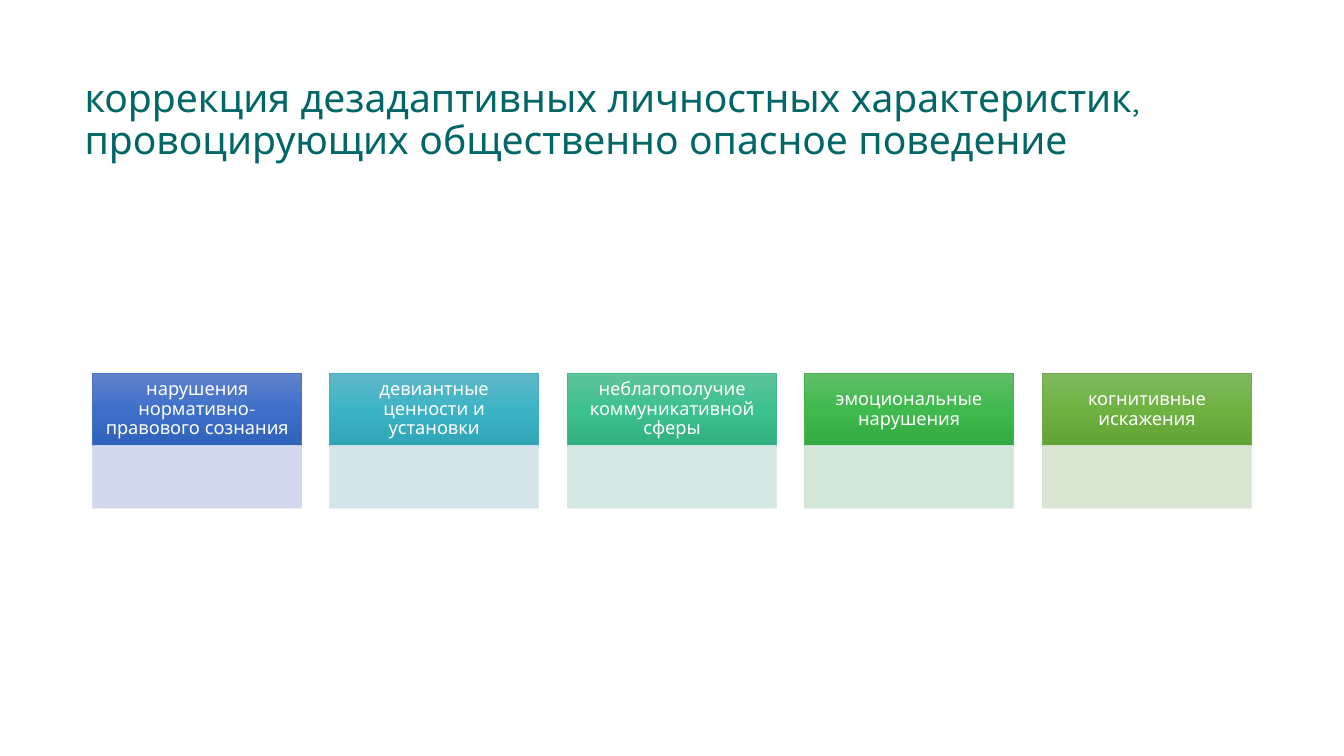
from lxml import etree
from pptx import Presentation
from pptx.dml.color import RGBColor as Color
from pptx.enum.shapes import MSO_SHAPE as Shape
from pptx.enum.text import MSO_ANCHOR as Anchor, PP_ALIGN as Align
from pptx.oxml import parse_xml
from pptx.oxml.ns import nsdecls, qn
from pptx.util import Pt

PX = 9144
FONT = "Quicksand"
LEFT, SPAN, WIDTH = 92, 942, 207
TOP, HEAD, BODY = 370, 72, 62

CARDS = [
    ("нарушения нормативно-правового сознания",
     ("6183CB", "3E70CA", "3062BB"), "4472C4", "CFD5EA"),
    ("девиантные ценности и установки",
     ("61B8C7", "3DB4C6", "30A5B7"), "43AFC0", "CFE2E8"),
    ("неблагополучие коммуникативной сферы",
     ("60C39A", "3DC18F", "31B080"), "43BB8D", "CFE6E0"),
    ("эмоциональные нарушения",
     ("60BE68", "40B94D", "34AA41"), "45B451", "CFE5D4"),
    ("когнитивные искажения",
     ("81B861", "6FB242", "62A336"), "70AD47", "D5E3CF"),
]


def paint(target, tone):
    target.rgb = Color.from_string(tone)


def write(frame, text, size, tone, align, anchor, pads):
    frame.word_wrap = True
    frame.vertical_anchor = anchor
    side, rise = pads
    frame.margin_left = frame.margin_right = side * PX
    frame.margin_top = frame.margin_bottom = rise * PX
    para = frame.paragraphs[0]
    para.alignment = align
    para.line_spacing = 0.9
    run = para.add_run()
    run.text = text
    run.font.name = FONT
    run.font.size = Pt(size)
    paint(run.font.color, tone)


def add_title(slide, text):
    box = slide.shapes.add_textbox(74 * PX, 78 * PX, 1150 * PX, 141 * PX)
    write(box.text_frame, text, 27.9, "006666", Align.LEFT, Anchor.TOP, (10, 0))


def add_rect(slide, left, top, high, tone, edge):
    rect = slide.shapes.add_shape(
        Shape.RECTANGLE, left * PX, top * PX, WIDTH * PX, high * PX)
    rect.shadow.inherit = False
    rect.fill.solid()
    paint(rect.fill.fore_color, tone)
    paint(rect.line.color, edge)
    rect.line.width = Pt(0.5)
    return rect


def blend(rect, tones):
    stops = "".join(
        f'<a:gs pos="{i * 50000}"><a:srgbClr val="{tone}"/></a:gs>'
        for i, tone in enumerate(tones))
    grad = parse_xml(
        f'<a:gradFill {nsdecls("a")} rotWithShape="1"><a:gsLst>{stops}</a:gsLst>'
        '<a:lin ang="5400000" scaled="0"/></a:gradFill>')
    props = rect.element.spPr
    props.replace(props.find(qn("a:solidFill")), grad)


def fade(rect, share):
    for tone in rect.element.spPr.iter(qn("a:srgbClr")):
        etree.SubElement(tone, qn("a:alpha")).set("val", str(share * 1000))


def add_card(slide, left, text, tones, edge, pale):
    head = add_rect(slide, left, TOP, HEAD, tones[1], edge)
    blend(head, tones)
    write(head.text_frame, text, 13, "FFFFFF", Align.CENTER, Anchor.MIDDLE, (10, 6))
    fade(add_rect(slide, left, TOP + HEAD, BODY, pale, pale), 90)


def main():
    deck = Presentation()
    deck.slide_width, deck.slide_height = 1333 * PX, 750 * PX
    slide = deck.slides.add_slide(deck.slide_layouts[6])
    add_title(slide, "коррекция дезадаптивных личностных характеристик, "
                     "провоцирующих общественно опасное поведение")
    for i, card in enumerate(CARDS):
        add_card(slide, LEFT + SPAN * i // (len(CARDS) - 1), *card)
    deck.save("out.pptx")


if __name__ == "__main__":
    main()
